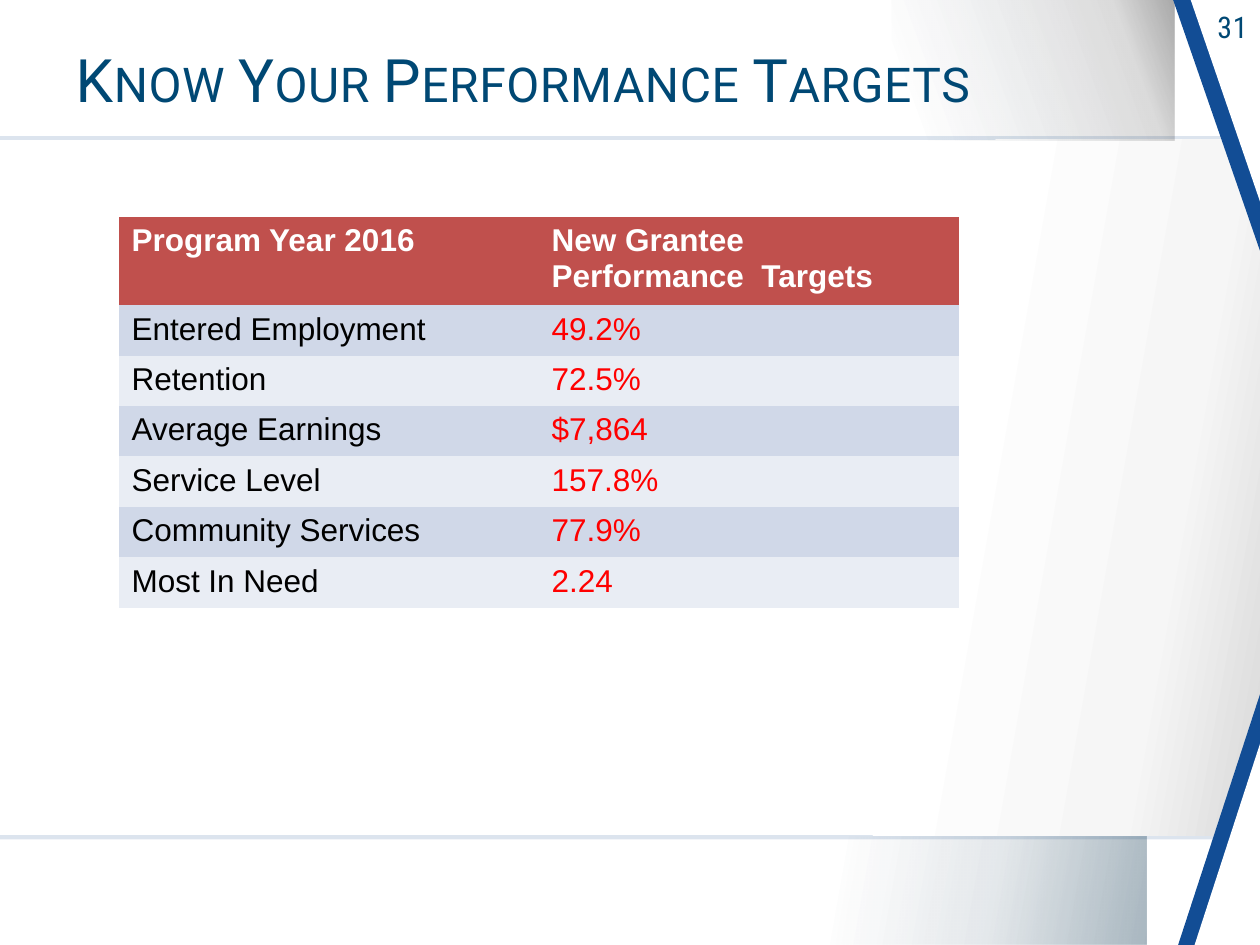
from lxml import etree
from pptx import Presentation, util as u
from pptx.dml.color import RGBColor
from pptx.enum import shapes, text
from pptx.oxml import parse_xml
from pptx.oxml.ns import nsdecls, qn

PLAIN = "{2D5ABB26-0587-4C30-8999-92F81FD0307C}"  # no style, no grid


def color(code):
    return RGBColor.from_string(code)


def write(para, words, font="Arial", size=18, hue="000000", bold=False,
          align=text.PP_ALIGN.LEFT, line=None, gap=None, small=False):
    """Add a formatted run; gap is letter spacing in points."""
    para.alignment = align
    if line:
        para.line_spacing = line
    run = para.add_run()
    run.text = words
    run.font.name, run.font.size, run.font.bold = font, u.Pt(size), bold
    run.font.color.rgb = color(hue)
    props = run._r.get_or_add_rPr()
    if gap:
        props.set("spc", str(round(gap * 100)))
    if small:
        props.set("cap", "small")


class Deck:
    navy, blue, white = "004874", "124D95", "FFFFFF"
    head, bands = "C0504D", ("D0D8E8", "E9EDF4")

    def __init__(self, wide, high):
        self.prs = Presentation()
        self.prs.slide_width, self.prs.slide_height = u.Pt(wide), u.Pt(high)
        self.slide = self.prs.slides.add_slide(self.prs.slide_layouts[5])
        self.items = self.slide.shapes

    def shape(self, kind, box, fill, alpha=100):
        item = self.items.add_shape(kind, *map(u.Pt, box))
        item.shadow.inherit = False
        item.line.fill.background()
        item.fill.solid()
        item.fill.fore_color.rgb = color(fill)
        if alpha < 100:
            tint = item._element.spPr.find(".//" + qn("a:srgbClr"))
            etree.SubElement(tint, qn("a:alpha"), val=str(alpha * 1000))
        return item

    def fade(self, box, angle, stops):
        """Rectangle with a gradient of (place, colour, opacity) stops."""
        item = self.shape(shapes.MSO_SHAPE.RECTANGLE, box, self.white)
        marks = "".join(
            f'<a:gs pos="{at * 1000}"><a:srgbClr val="{hue}">'
            f'<a:alpha val="{alpha * 1000}"/></a:srgbClr></a:gs>'
            for at, hue, alpha in stops)
        grad = parse_xml(
            f'<a:gradFill {nsdecls("a")} rotWithShape="1"><a:gsLst>{marks}'
            f'</a:gsLst><a:lin ang="{angle * 60000}" scaled="0"/></a:gradFill>')
        props = item._element.spPr
        props.replace(props.find(qn("a:solidFill")), grad)

    def wedge(self, box, fill, flip=False):
        item = self.shape(shapes.MSO_SHAPE.ISOSCELES_TRIANGLE, box, fill)
        item.adjustments[0] = 1
        if flip:
            item._element.spPr.find(qn("a:xfrm")).set("flipV", "1")

    def label(self, box, words, **style):
        frame = self.items.add_textbox(*map(u.Pt, box)).text_frame
        frame.word_wrap = True
        write(frame.paragraphs[0], words, **style)

    def title(self, box, words, **style):
        item = self.items.title
        item.left, item.top, item.width, item.height = map(u.Pt, box)
        frame = item.text_frame
        frame.auto_size = text.MSO_AUTO_SIZE.NONE
        frame.vertical_anchor = text.MSO_ANCHOR.MIDDLE
        write(frame.paragraphs[0], words, **style)
        self.items._spTree.append(item._element)  # in front of the backdrop

    def table(self, box, rows, top, high):
        item = self.items.add_table(len(rows), len(rows[0]), *map(u.Pt, box))
        grid = item.table
        grid._tbl.tblPr.find(qn("a:tableStyleId")).text = PLAIN
        for r, row in enumerate(rows):
            grid.rows[r].height = u.Pt(high if r else top)
            for c, words in enumerate(row):
                cell = grid.cell(r, c)
                cell.fill.solid()
                cell.fill.fore_color.rgb = color(
                    self.bands[(r - 1) % 2] if r else self.head)
                hue = ("000000", "FF0000")[c] if r else self.white
                frame = cell.text_frame
                for n, part in enumerate(words.split("\n")):
                    para = frame.add_paragraph() if n else frame.paragraphs[0]
                    write(para, part, hue=hue, bold=r == 0)


def main():
    deck = Deck(720, 540)

    # Body panel, its edge showing as thin rules
    deck.shape(shapes.MSO_SHAPE.RECTANGLE, (0, 77.8, 720, 401.8), "275A99", 16)
    deck.fade((0, 79.9, 720, 397.4), 10,
              [(0, "FFFFFF", 100), (72, "FFFFFF", 100),
               (90, "F6F6F6", 100), (100, "D9D9D9", 100)])

    # Shaded blocks at foot and head
    deck.fade((463, 478, 192.2, 62), 10,
              [(10, "002C47", 0), (56, "002C47", 11), (100, "002C47", 34)])
    deck.fade((509.8, 0, 161.3, 80.6), 340,
              [(10, "002C47", 0), (81, "000000", 14), (100, "000000", 34)])

    # Blue corner bands, each a blue wedge under a white one
    deck.wedge((670.4, 0, 49.6, 143.3), deck.blue, flip=True)
    deck.wedge((680.4, 0, 39.6, 115.2), deck.white, flip=True)
    deck.wedge((673.2, 396.7, 46.8, 143.3), deck.blue)
    deck.wedge((682.6, 425, 37.4, 115), deck.white)

    # Page number and title
    deck.label((662.4, 1.4, 57.6, 28), "31", font="Roboto Condensed", size=17,
               hue=deck.navy, align=text.PP_ALIGN.RIGHT, gap=0.4)
    deck.title((36, 17.3, 544.3, 61.2), "Know Your Performance Targets",
               font="Roboto", size=34.2, hue=deck.navy, line=0.85, gap=0.4,
               small=True)

    # Targets
    deck.table((68, 124, 480, 223.2), [
        ("Program Year 2016", "New Grantee\nPerformance  Targets"),
        ("Entered Employment", "49.2%"),
        ("Retention", "72.5%"),
        ("Average Earnings", "$7,864"),
        ("Service Level", "157.8%"),
        ("Community Services", "77.9%"),
        ("Most In Need", "2.24"),
    ], top=50.4, high=28.8)

    deck.prs.save("out.pptx")


if __name__ == "__main__":
    main()
